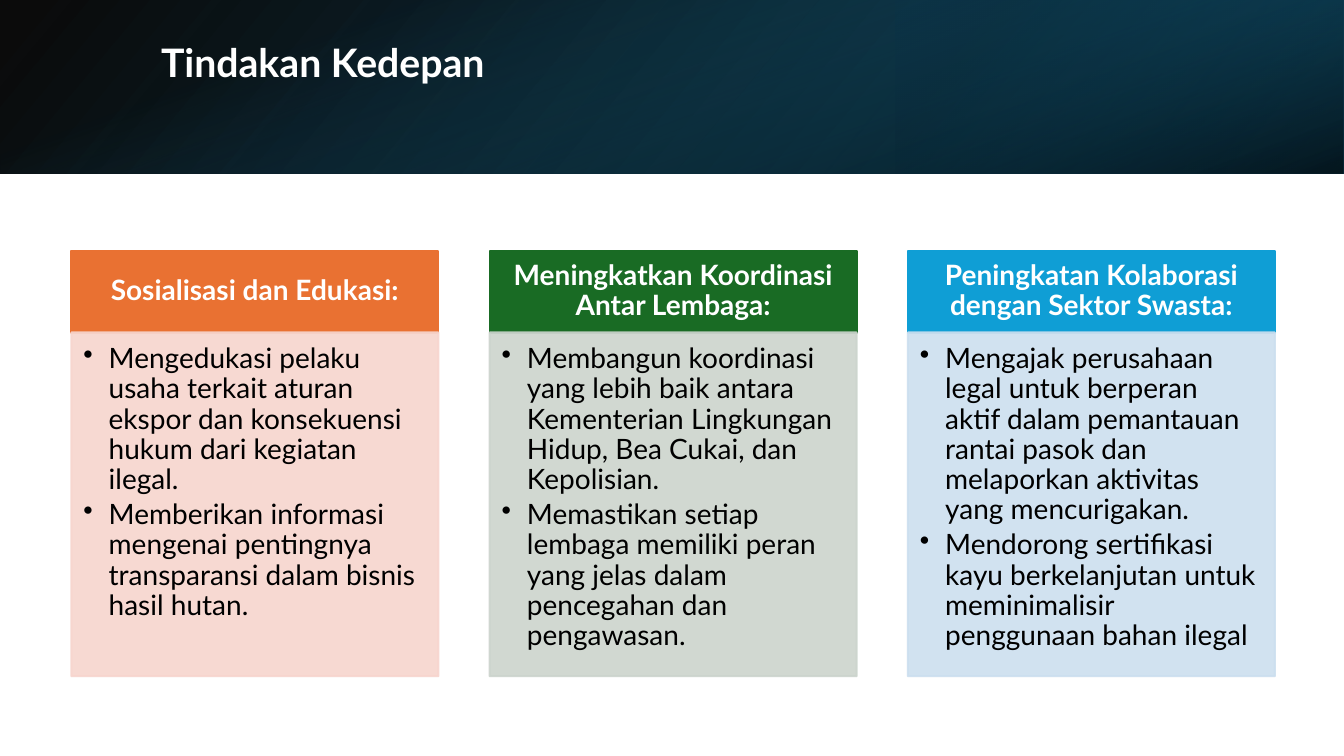
from dataclasses import dataclass

from pptx import Presentation
from pptx.dml.color import RGBColor
from pptx.enum.shapes import MSO_SHAPE
from pptx.enum.text import MSO_ANCHOR, PP_ALIGN
from pptx.oxml.ns import qn
from pptx.util import Cm, Pt

RECTANGLE = MSO_SHAPE.RECTANGLE
TOP, MIDDLE = MSO_ANCHOR.TOP, MSO_ANCHOR.MIDDLE
LEFT, CENTER = PP_ALIGN.LEFT, PP_ALIGN.CENTER

FONT = "Lato"
SLIDE_WIDTH, SLIDE_HEIGHT = 33.87, 19.05
BAND_HEIGHT = 4.37
BAND_OFFSET = (SLIDE_WIDTH - BAND_HEIGHT) / 2
CARD_LEFT, CARD_TOP, CARD_WIDTH, CARD_PITCH = 1.8, 6.32, 9.25, 10.54
HEADER_HEIGHT, BODY_HEIGHT = 2.06, 8.66
HEADER_INSETS = (0.41, 0.23, 0.41, 0.23)
BODY_INSETS = (0.3, 0.3, 0.41, 0.43)
BULLET_INDENT = 0.64


@dataclass
class Stop:
    position: float
    color: str
    alpha: int


@dataclass
class BandLayer:
    box: tuple[float, float, float, float]
    stops: tuple[Stop, Stop]
    angle: int
    rotation: int
    flipped: bool


@dataclass
class Card:
    heading: str
    points: tuple[str, ...]
    header_color: str
    body_color: str


BAND_LAYERS = [
    BandLayer((0, 0, SLIDE_WIDTH, BAND_HEIGHT),
              (Stop(0, "000000", 96), Stop(1, "104862", 100)), 140, 0, True),
    BandLayer((SLIDE_WIDTH * 2 / 3, 0, SLIDE_WIDTH / 3, BAND_HEIGHT),
              (Stop(0.19, "0B3041", 68), Stop(1, "156082", 79)), 320, 180, True),
    BandLayer((BAND_OFFSET, -BAND_OFFSET, BAND_HEIGHT, SLIDE_WIDTH),
              (Stop(0.23, "156082", 0), Stop(0.99, "000000", 74)), 340, 90, False),
]

CARDS = [
    Card("Sosialisasi dan Edukasi:",
         ("Mengedukasi pelaku usaha terkait aturan ekspor dan konsekuensi hukum "
          "dari kegiatan ilegal.",
          "Memberikan informasi mengenai pentingnya transparansi dalam bisnis hasil hutan."),
         "E97132", "F7D5CE"),
    Card("Meningkatkan Koordinasi Antar Lembaga:",
         ("Membangun koordinasi yang lebih baik antara Kementerian Lingkungan Hidup, "
          "Bea Cukai, dan Kepolisian.",
          "Memastikan setiap lembaga memiliki peran yang jelas dalam pencegahan "
          "dan pengawasan."),
         "196B24", "CCD4CD"),
    Card("Peningkatan Kolaborasi dengan Sektor Swasta:",
         ("Mengajak perusahaan legal untuk berperan aktif dalam pemantauan rantai pasok "
          "dan melaporkan aktivitas yang mencurigakan.",
          "Mendorong sertifikasi kayu berkelanjutan untuk meminimalisir penggunaan "
          "bahan ilegal"),
         "0F9ED5", "CCDFEF"),
]


def rgb(color: str) -> RGBColor:
    return RGBColor.from_string(color)


def set_alphas(shape, alphas: list[int]) -> None:
    properties = shape.element.find(qn("p:spPr"))
    for node, alpha in zip(properties.iter(qn("a:srgbClr")), alphas):
        if alpha < 100:
            alpha_node = node.makeelement(qn("a:alpha"), {"val": str(alpha * 1000)})
            node.append(alpha_node)


def add_rectangle(slide, box: tuple[float, float, float, float]):
    shape = slide.shapes.add_shape(RECTANGLE, *map(Cm, box))
    shape.shadow.inherit = False
    return shape


def add_band_layer(slide, layer: BandLayer) -> None:
    shape = add_rectangle(slide, layer.box)
    shape.line.fill.background()
    shape.fill.gradient()
    shape.fill.gradient_angle = 360 - layer.angle
    for gradient_stop, stop in zip(shape.fill.gradient_stops, layer.stops):
        gradient_stop.position = stop.position
        gradient_stop.color.rgb = rgb(stop.color)
    set_alphas(shape, [stop.alpha for stop in layer.stops])
    shape.rotation = layer.rotation
    if layer.flipped:
        shape.element.find(qn("p:spPr")).find(qn("a:xfrm")).set("flipH", "1")


def write_text(shape, texts: tuple[str, ...], size: int, color: str, bold: bool,
               alignment, anchor, bulleted: bool = False) -> None:
    frame = shape.text_frame
    frame.word_wrap = True
    frame.vertical_anchor = anchor
    frame.text = "\n".join(texts)
    for paragraph in frame.paragraphs:
        paragraph.alignment = alignment
        paragraph.line_spacing = 0.9
        paragraph.font.name = FONT
        paragraph.font.size = Pt(size)
        paragraph.font.bold = bold
        paragraph.font.color.rgb = rgb(color)
        if bulleted:
            paragraph.space_after = Pt(3.5)
            add_bullet(paragraph)


def add_bullet(paragraph) -> None:
    properties = paragraph._p.get_or_add_pPr()
    properties.set("marL", str(Cm(BULLET_INDENT)))
    properties.set("indent", str(-Cm(BULLET_INDENT)))
    bullet = properties.makeelement(qn("a:buChar"), {"char": "•"})
    properties.insert_element_before(bullet, "a:tabLst", "a:defRPr", "a:extLst")


def add_panel(slide, box: tuple[float, float, float, float], color: str, alpha: int,
              insets: tuple[float, float, float, float]):
    panel = add_rectangle(slide, box)
    panel.fill.solid()
    panel.fill.fore_color.rgb = rgb(color)
    panel.line.color.rgb = rgb(color)
    panel.line.width = Pt(1.5)
    set_alphas(panel, [alpha, alpha])
    frame = panel.text_frame
    frame.margin_left, frame.margin_top, frame.margin_right, frame.margin_bottom = map(Cm, insets)
    return panel


def add_card(slide, card: Card, left: float) -> None:
    header = add_panel(slide, (left, CARD_TOP, CARD_WIDTH, HEADER_HEIGHT),
                       card.header_color, 100, HEADER_INSETS)
    write_text(header, (card.heading,), 20, "FFFFFF", True, CENTER, MIDDLE)
    body = add_panel(slide, (left, CARD_TOP + HEADER_HEIGHT, CARD_WIDTH, BODY_HEIGHT),
                     card.body_color, 90, BODY_INSETS)
    write_text(body, card.points, 20, "000000", False, LEFT, TOP, bulleted=True)


def main() -> None:
    presentation = Presentation()
    presentation.slide_width = Cm(SLIDE_WIDTH)
    presentation.slide_height = Cm(SLIDE_HEIGHT)
    slide = presentation.slides.add_slide(presentation.slide_layouts[6])

    for layer in BAND_LAYERS:
        add_band_layer(slide, layer)

    title = slide.shapes.add_textbox(Cm(3.81), Cm(0.97), Cm(27.89), Cm(2.44))
    write_text(title, ("Tindakan Kedepan",), 28, "FFFFFF", True, LEFT, TOP)

    for index, card in enumerate(CARDS):
        add_card(slide, card, CARD_LEFT + index * CARD_PITCH)

    presentation.save("out.pptx")


if __name__ == "__main__":
    main()
